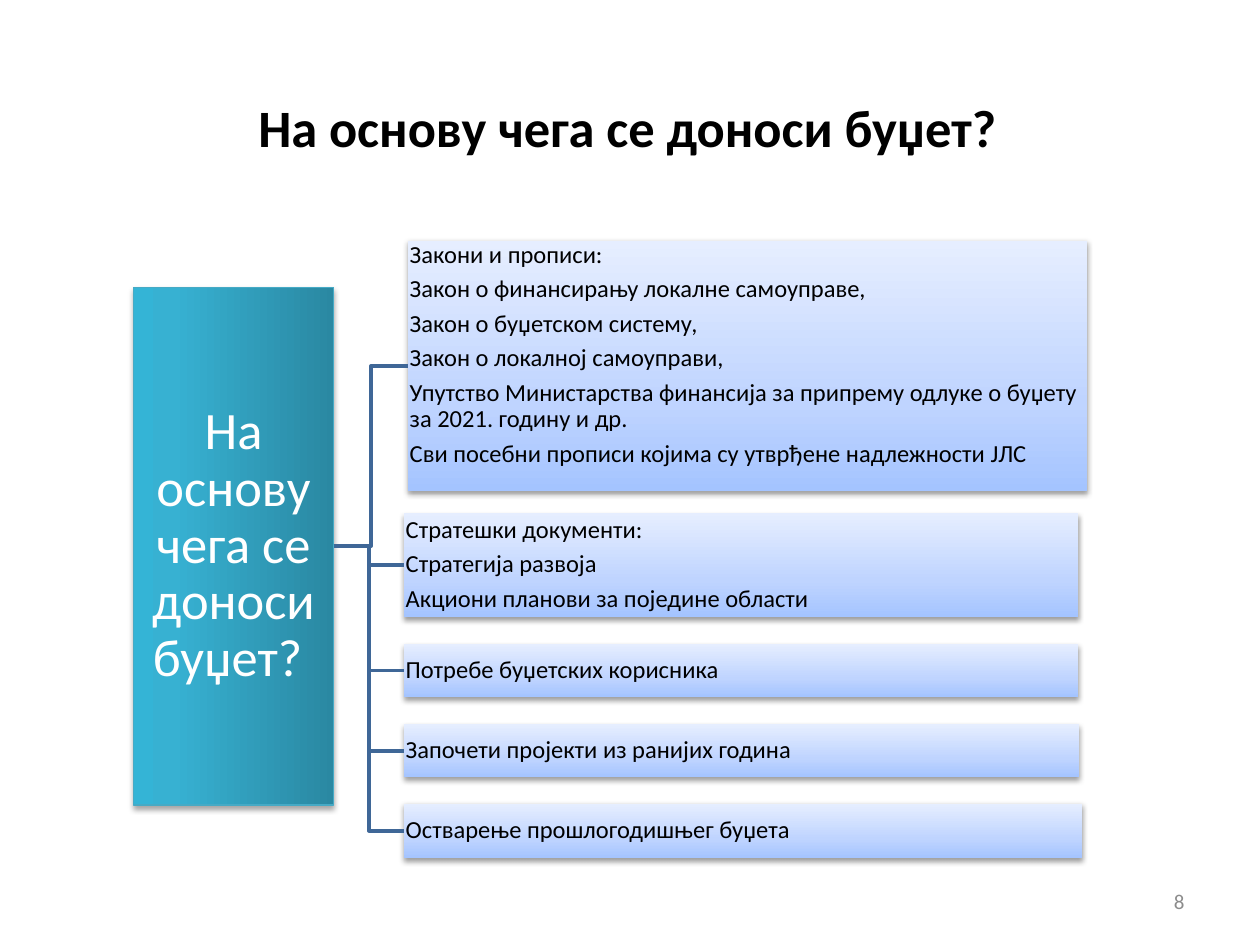
from lxml.etree import SubElement
from pptx import Presentation
from pptx.dml.color import RGBColor
from pptx.enum.shapes import MSO_CONNECTOR as CONN, MSO_SHAPE as SHAPE
from pptx.enum.text import MSO_ANCHOR as ANCHOR, PP_ALIGN as ALIGN
from pptx.oxml.ns import qn
from pptx.util import Cm, Pt

TEAL = [(0, "2A88A2"), (80, "37B1D2"), (100, "34B4D6")]
BLUE = [(0, "A4C4FF"), (35, "BFD4FF"), (100, "E6EEFF")]
QUESTION = "На основу чега се доноси буџет?"
SOURCES = [
    ((8.23, 4.85, 13.69, 5.05), ANCHOR.TOP, [
        "Закони и прописи:",
        "Закон о финансирању локалне самоуправе,",
        "Закон о буџетском систему,",
        "Закон о локалној самоуправи,",
        "Упутство Министарства финансија за припрему одлуке о буџету за 2021. годину и др.",
        "Сви посебни прописи којима су утврђене надлежности ЈЛС"]),
    ((8.15, 10.34, 13.59, 2.1), ANCHOR.MIDDLE, [
        "Стратешки документи:",
        "Стратегија развоја",
        "Акциони планови за поједине области"]),
    ((8.15, 12.98, 13.59, 1.07), ANCHOR.MIDDLE, ["Потребе буџетских корисника"]),
    ((8.15, 14.6, 13.61, 1.07), ANCHOR.MIDDLE, ["Започети пројекти из ранијих година"]),
    ((8.15, 16.2, 13.67, 1.1), ANCHOR.MIDDLE, ["Остварење прошлогодишњег буџета"]),
]


def rgb(color):
    return RGBColor.from_string(color)


def write(sp, lines, size, color, align=ALIGN.LEFT, anchor=ANCHOR.MIDDLE,
          bold=False, inset=None, spacing=None, after=None):
    tf = sp.text_frame
    tf.word_wrap = True
    tf.vertical_anchor = anchor
    if inset is not None:
        tf.margin_left = tf.margin_right = tf.margin_top = tf.margin_bottom = Cm(inset)
    tf.text = "\n".join(lines)
    for p in tf.paragraphs:
        p.alignment = align
        p.line_spacing = spacing
        p.space_after = after
        p.font.name = "Calibri"
        p.font.size = Pt(size)
        p.font.bold = bold
        p.font.color.rgb = rgb(color)


def fill_gradient(sp, stops, angle):
    sp.fill.gradient()
    sp.fill.gradient_angle = angle
    gs_list = sp._element.spPr.find(".//" + qn("a:gsLst"))
    for gs in list(gs_list):
        gs_list.remove(gs)
    for pos, color in stops:
        gs = SubElement(gs_list, qn("a:gs"), pos=str(pos * 1000))
        SubElement(gs, qn("a:srgbClr"), val=color)


def add_shadow(sp, alpha, dist):
    sp.shadow.inherit = False
    effects = sp._element.spPr.find(qn("a:effectLst"))
    shadow = SubElement(effects, qn("a:outerShdw"), blurRad=str(Pt(3.1)),
                        dist=str(Pt(dist)), dir="5400000", rotWithShape="0")
    color = SubElement(shadow, qn("a:srgbClr"), val="000000")
    SubElement(color, qn("a:alpha"), val=str(alpha * 1000))


def add_box(s, place, stops, angle, alpha, dist, line=None):
    sp = s.shapes.add_shape(SHAPE.RECTANGLE, *map(Cm, place))
    fill_gradient(sp, stops, angle)
    if line:
        sp.line.color.rgb = rgb(line)
        sp.line.width = Pt(0.75)
    else:
        sp.line.fill.background()
    add_shadow(sp, alpha, dist)
    return sp


def add_branch(s, root, box):
    c = s.shapes.add_connector(CONN.ELBOW, 0, 0, 0, 0)
    c.begin_connect(root, 3)
    c.end_connect(box, 1)
    c.line.color.rgb = rgb("3F6797")
    c.line.width = Pt(2)
    SubElement(c._element.spPr, qn("a:effectLst"))


def add_title(s):
    sp = s.shapes.title
    sp.left, sp.top, sp.width, sp.height = map(Cm, (1.22, 1.37, 22.86, 2.36))
    write(sp, [QUESTION], 30, "000000", ALIGN.CENTER, bold=True)


def add_page_number(s):
    sp = s.shapes.add_textbox(*map(Cm, (18.21, 17.65, 5.92, 1.02)))
    write(sp, ["8"], 12, "8C8C8C", ALIGN.RIGHT)


def main():
    prs = Presentation()
    prs.slide_width, prs.slide_height = Cm(25.4), Cm(19.05)
    s = prs.slides.add_slide(prs.slide_layouts[5])
    add_title(s)
    add_page_number(s)
    root = add_box(s, (2.69, 5.79, 4.04, 10.44), TEAL, 180, 35, 1.8, "46AAC5")
    write(root, [QUESTION + " "], 30, "FFFFFF", ALIGN.CENTER, inset=0.05, spacing=0.9)
    for place, anchor, lines in SOURCES:
        box = add_box(s, place, BLUE, 90, 38, 1.6)
        write(box, lines, 14, "000000", anchor=anchor, inset=0.03,
              spacing=0.9, after=Pt(4.6))
        add_branch(s, root, box)
    prs.save("out.pptx")


if __name__ == "__main__":
    main()
